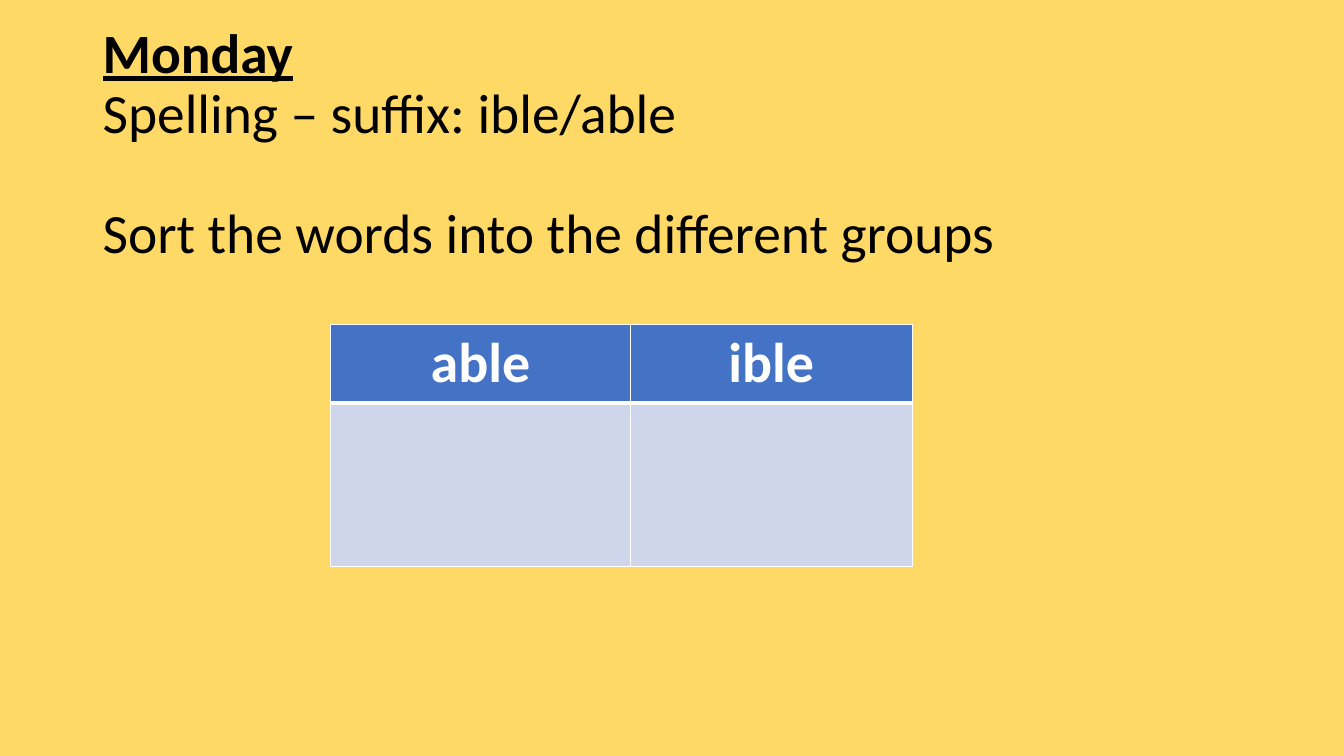
from lxml import etree
from pptx import Presentation
from pptx import util as u
from pptx.dml.color import RGBColor
from pptx.enum import text
from pptx.oxml import ns

COLORS = {
    "background": "FFD966",
    "ink": "000000",
    "white": "FFFFFF",
    "header": "4472C4",
    "body": "CFD5EA",
}
FONT = "Calibri"
LINE_HEIGHT = 43.5


def rgb(name):
    return RGBColor.from_string(COLORS[name])


def add_borders(cell, widths):
    properties = cell._tc.get_or_add_tcPr()
    for index, (side, width) in enumerate(widths.items()):
        line = etree.Element(ns.qn(f"a:ln{side}"), w=str(u.Pt(width)))
        fill = etree.SubElement(line, ns.qn("a:solidFill"))
        etree.SubElement(fill, ns.qn("a:srgbClr"), val=COLORS["white"])
        properties.insert(index, line)


deck = Presentation()
deck.slide_width, deck.slide_height = u.Inches(13.33), u.Inches(7.5)
slide = deck.slides.add_slide(deck.slide_layouts[6])
slide.background.fill.solid()
slide.background.fill.fore_color.rgb = rgb("background")

lesson = slide.shapes.add_textbox(
    u.Inches(0.92), u.Inches(0.72), u.Inches(11.5), u.Inches(1.45)
).text_frame
lesson.word_wrap = True
lesson.auto_size = text.MSO_AUTO_SIZE.NONE
lesson.vertical_anchor = text.MSO_ANCHOR.MIDDLE
lesson.text = "Monday\nSpelling – suffix: ible/able\nSort the words into the different groups"
for paragraph in lesson.paragraphs:
    paragraph.line_spacing = 0.9
    paragraph.font.name = FONT
    paragraph.font.size = u.Pt(39.6)
    paragraph.font.color.rgb = rgb("ink")
day, topic, task = lesson.paragraphs
day.font.bold = day.font.underline = True
task.space_before = u.Pt(LINE_HEIGHT)

suffixes = ["able", "ible"]
column_widths = [2.97, 2.8]
row_heights = [0.72, 1.62]
groups = slide.shapes.add_table(
    len(row_heights), len(suffixes), u.Inches(3.28), u.Inches(3.22),
    u.Inches(sum(column_widths)), u.Inches(sum(row_heights)),
).table
for row, height in zip(groups.rows, row_heights):
    row.height = u.Inches(height)

for column, (suffix, width) in enumerate(zip(suffixes, column_widths)):
    groups.columns[column].width = u.Inches(width)
    heading, word_space = groups.cell(0, column), groups.cell(1, column)
    heading.text = suffix
    label = heading.text_frame.paragraphs[0]
    label.alignment = text.PP_ALIGN.CENTER
    label.font.name = FONT
    label.font.size = u.Pt(40)
    label.font.bold = True
    label.font.color.rgb = rgb("white")
    for cell, color, top, bottom in [(heading, "header", 1, 3), (word_space, "body", 3, 1)]:
        cell.fill.solid()
        cell.fill.fore_color.rgb = rgb(color)
        add_borders(cell, {"L": 1, "R": 1, "T": top, "B": bottom})

deck.save("out.pptx")
